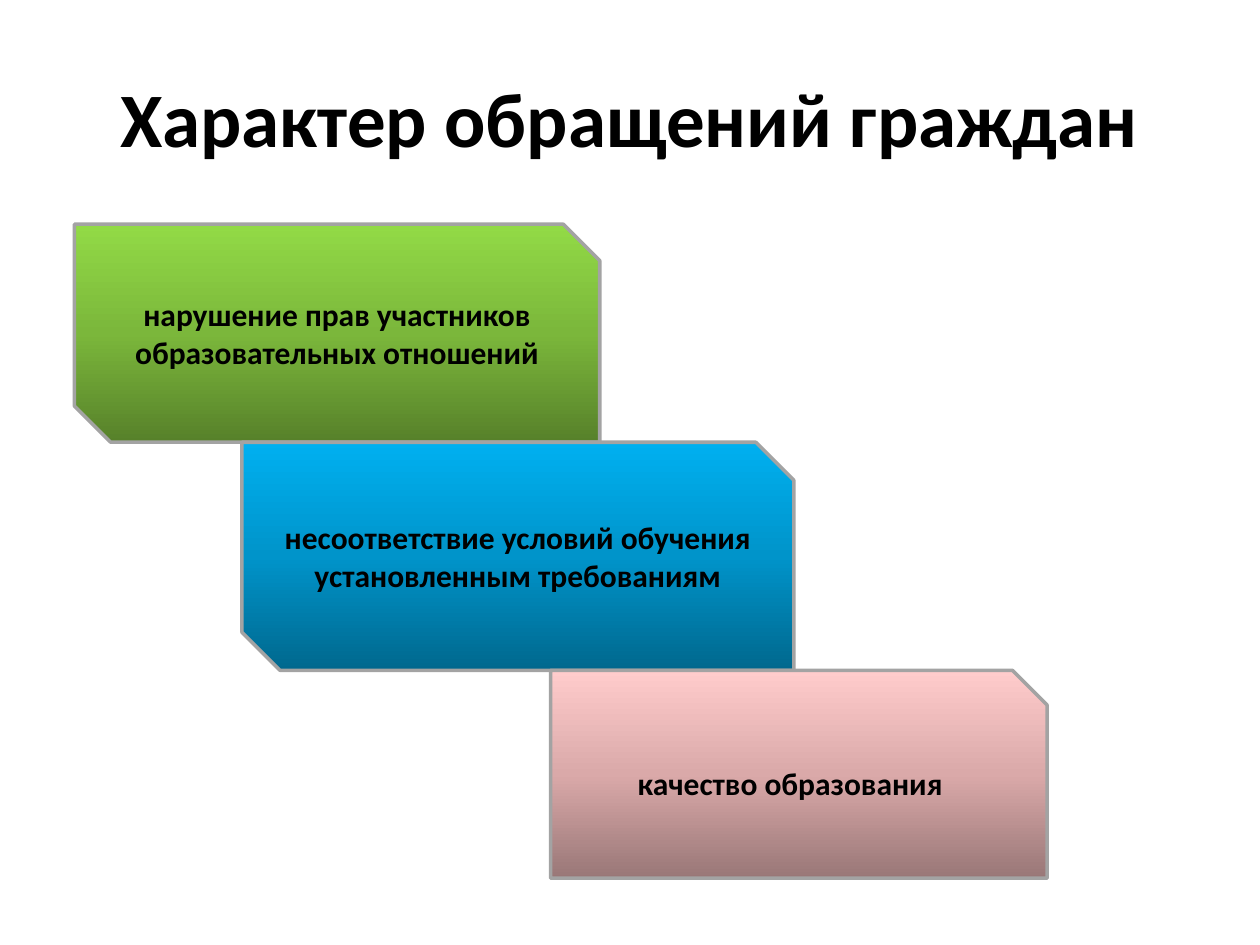
from copy import deepcopy
from dataclasses import dataclass

from pptx import Presentation
from pptx import util as u
from pptx.dml.color import RGBColor
from pptx.enum import shapes, text
from pptx.oxml.ns import qn


@dataclass(frozen=True)
class Theme:
    font: str = "Calibri"
    ink: str = "000000"
    border: str = "A3A3A3"
    border_width: float = 2
    title_size: int = 44
    reason_size: int = 18
    green: tuple = ("57812A", "7BB73B", "92DA46")
    blue: tuple = ("00688E", "0094CA", "00B0F0")
    pink: tuple = ("997777", "DAA9A9", "FFCCCC")


THEME = Theme()
WIDTH, HEIGHT = 10, 7.5
STAIRS_TOP = 1.78
DOUBLE_SNIP = shapes.MSO_SHAPE.SNIP_2_DIAG_RECTANGLE
SINGLE_SNIP = shapes.MSO_SHAPE.SNIP_1_RECTANGLE

REASONS = [
    ("нарушение прав участников образовательных отношений",
     DOUBLE_SNIP, THEME.green, 0.59, 4.17, 1.73),
    ("несоответствие условий обучения установленным требованиям",
     DOUBLE_SNIP, THEME.blue, 1.92, 4.38, 1.81),
    ("качество образования",
     SINGLE_SNIP, THEME.pink, 4.37, 3.94, 1.65),
]


def write(holder, wording, size):
    frame = holder.text_frame
    frame.word_wrap = True
    frame.vertical_anchor = text.MSO_ANCHOR.MIDDLE
    line = frame.paragraphs[0]
    line.text = wording
    line.alignment = text.PP_ALIGN.CENTER
    line.font.name = THEME.font
    line.font.size = u.Pt(size)
    line.font.bold = True
    line.font.color.rgb = RGBColor.from_string(THEME.ink)


def shade_upwards(step, colours):
    step.fill.gradient()
    step.fill.gradient_angle = 90
    stops = step._element.spPr.find(qn("a:gradFill")).find(qn("a:gsLst"))
    stops.insert(1, deepcopy(stops[0]))
    for index, (stop, colour) in enumerate(zip(step.fill.gradient_stops, colours)):
        stop.position = index / (len(colours) - 1)
        stop.color.rgb = RGBColor.from_string(colour)


def add_title(slide, wording):
    margin = 0.05 * WIDTH
    title = slide.shapes.add_textbox(
        u.Inches(margin), u.Inches(0.04 * HEIGHT),
        u.Inches(WIDTH - 2 * margin), u.Inches(HEIGHT / 6))
    write(title, wording, THEME.title_size)


def add_step(slide, wording, outline, colours, left, top, width, height):
    step = slide.shapes.add_shape(
        outline, u.Inches(left), u.Inches(top), u.Inches(width), u.Inches(height))
    step.shadow.inherit = False
    shade_upwards(step, colours)
    step.line.color.rgb = RGBColor.from_string(THEME.border)
    step.line.width = u.Pt(THEME.border_width)
    write(step, wording, THEME.reason_size)


def main():
    deck = Presentation()
    deck.slide_width, deck.slide_height = u.Inches(WIDTH), u.Inches(HEIGHT)
    slide = deck.slides.add_slide(deck.slide_layouts[6])
    add_title(slide, "Характер обращений граждан")
    top = STAIRS_TOP
    for wording, outline, colours, left, width, height in REASONS:
        add_step(slide, wording, outline, colours, left, top, width, height)
        top += height
    deck.save("out.pptx")


if __name__ == "__main__":
    main()
